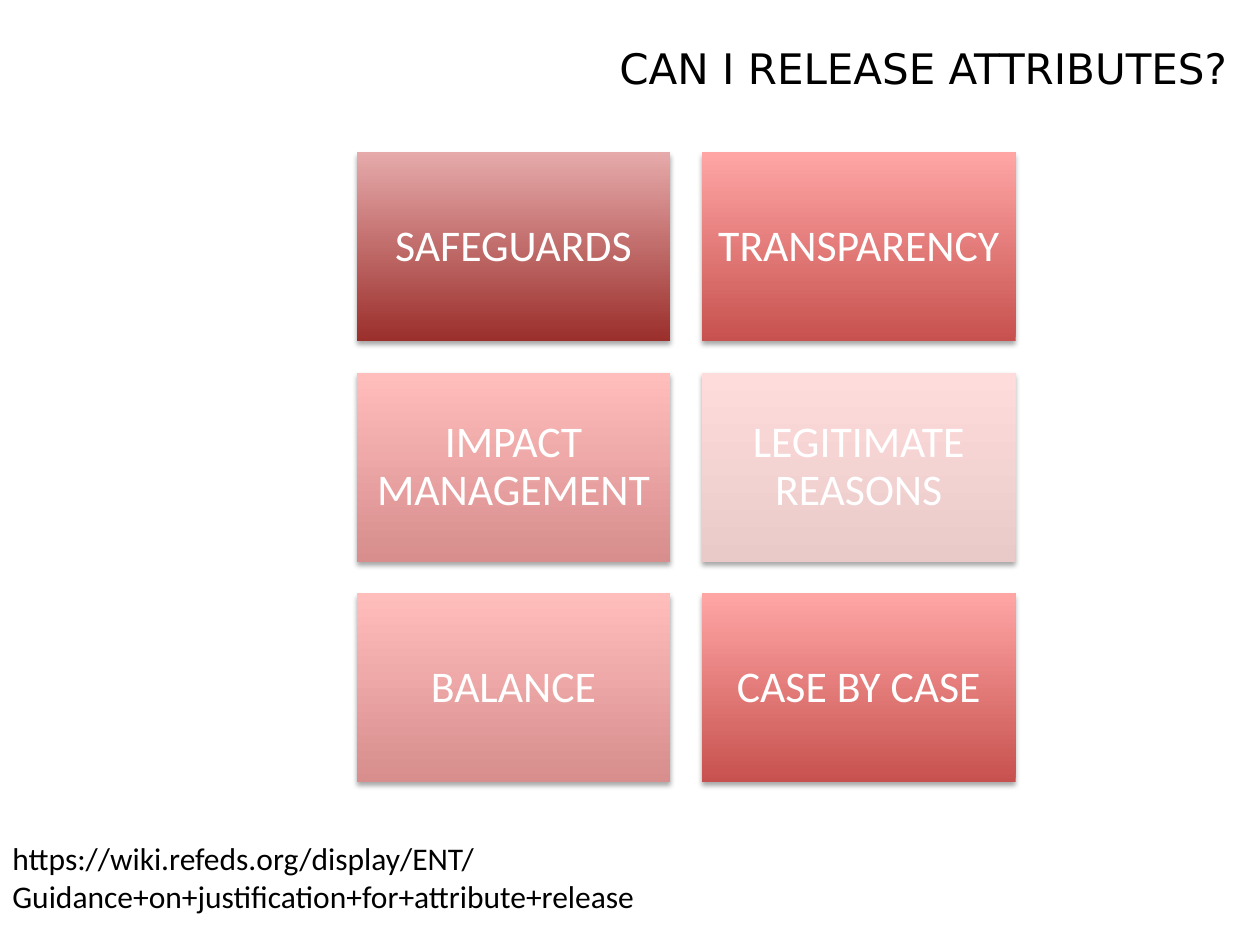
from dataclasses import dataclass
from typing import Any

from lxml import etree
from pptx import Presentation, util as u
from pptx.dml.color import RGBColor
from pptx.enum import shapes, text
from pptx.oxml.ns import qn

BLACK = RGBColor(0x00, 0x00, 0x00)
WHITE = RGBColor(0xFF, 0xFF, 0xFF)
DARK_RED = (RGBColor(0x9B, 0x2F, 0x2C), RGBColor(0xE6, 0xAA, 0xAA))
RED = (RGBColor(0xC7, 0x51, 0x4E), RGBColor(0xFF, 0xA6, 0xA5))
ROSE = (RGBColor(0xD7, 0x8E, 0x8D), RGBColor(0xFF, 0xBD, 0xBC))
PALE_ROSE = (RGBColor(0xEA, 0xC9, 0xC9), RGBColor(0xFF, 0xDC, 0xDC))

COLUMNS = 2
TILE_LEFT, TILE_TOP = 2.83, 1.21
TILE_WIDTH, TILE_HEIGHT = 2.49, 1.5
TILE_GAP = 0.25

INSETS = ("margin_left", "margin_top", "margin_right", "margin_bottom")
TILE_FRAME = {
    "word_wrap": True,
    "vertical_anchor": text.MSO_ANCHOR.MIDDLE,
    **dict.fromkeys(INSETS, u.Inches(0.1)),
}
TILE_PARAGRAPH = {"alignment": text.PP_ALIGN.CENTER, "line_spacing": 0.9}
TILE_FONT = {"name": "Calibri", "size": u.Pt(25)}
TITLE_FRAME = {
    "word_wrap": True,
    "auto_size": text.MSO_AUTO_SIZE.NONE,
    "vertical_anchor": text.MSO_ANCHOR.TOP,
}
TITLE_PARAGRAPH = {"alignment": text.PP_ALIGN.RIGHT}
TITLE_FONT = {"name": "DejaVu Sans", "size": u.Pt(24)}
LINK_FRAME = {"word_wrap": True, "auto_size": text.MSO_AUTO_SIZE.SHAPE_TO_FIT_TEXT}
LINK_FONT = {"name": "Calibri", "size": u.Pt(18)}


@dataclass(frozen=True)
class Tile:
    label: str
    gradient: tuple[RGBColor, RGBColor]


TILES = [
    Tile("SAFEGUARDS", DARK_RED),
    Tile("TRANSPARENCY", RED),
    Tile("IMPACT MANAGEMENT", ROSE),
    Tile("LEGITIMATE REASONS", PALE_ROSE),
    Tile("BALANCE", ROSE),
    Tile("CASE BY CASE", RED),
]


def apply(target: Any, values: dict[str, Any]) -> None:
    for name, value in values.items():
        setattr(target, name, value)


def write(shape: Any, words: str, frame: dict, line: dict, font: dict, color: RGBColor) -> None:
    shape.text_frame.text = words
    apply(shape.text_frame, frame)
    paragraph = shape.text_frame.paragraphs[0]
    apply(paragraph, line)
    run = paragraph.runs[0]
    apply(run.font, font)
    run.font.color.rgb = color


def add_shadow(shape: Any) -> None:
    shape.shadow.inherit = False
    effects = shape._element.spPr.find(qn("a:effectLst"))
    shadow = etree.SubElement(
        effects, qn("a:outerShdw"), blurRad=str(u.Pt(3.1)), dist=str(u.Pt(1.8)),
        dir="5400000", rotWithShape="0",
    )
    color = etree.SubElement(shadow, qn("a:srgbClr"), val="000000")
    etree.SubElement(color, qn("a:alpha"), val="35000")


def add_tile(slide: Any, tile: Tile, index: int) -> None:
    row, column = divmod(index, COLUMNS)
    shape = slide.shapes.add_shape(
        shapes.MSO_SHAPE.RECTANGLE,
        u.Inches(TILE_LEFT + column * (TILE_WIDTH + TILE_GAP)),
        u.Inches(TILE_TOP + row * (TILE_HEIGHT + TILE_GAP)),
        u.Inches(TILE_WIDTH),
        u.Inches(TILE_HEIGHT),
    )
    shape.fill.gradient()
    shape.fill.gradient_angle = 90
    for stop, color in zip(shape.fill.gradient_stops, tile.gradient):
        stop.color.rgb = color
    shape.line.fill.background()
    add_shadow(shape)
    write(shape, tile.label, TILE_FRAME, TILE_PARAGRAPH, TILE_FONT, WHITE)


def main() -> None:
    presentation = Presentation()
    presentation.slide_width = u.Inches(10)
    presentation.slide_height = u.Inches(7.5)
    slide = presentation.slides.add_slide(presentation.slide_layouts.get_by_name("Title Only"))

    for index, tile in enumerate(TILES):
        add_tile(slide, tile, index)

    link = slide.shapes.add_textbox(u.Inches(0), u.Inches(6.61), u.Inches(7.39), u.Inches(0.71))
    address = "https://wiki.refeds.org/display/ENT/Guidance+on+justification+for+attribute+release"
    write(link, address, LINK_FRAME, {}, LINK_FONT, BLACK)

    title = slide.shapes.title
    apply(title, {
        "left": u.Inches(2.83), "top": u.Inches(0.29),
        "width": u.Inches(7.01), "height": u.Inches(1.25),
    })
    write(title, "CAN I RELEASE ATTRIBUTES?", TITLE_FRAME, TITLE_PARAGRAPH, TITLE_FONT, BLACK)

    presentation.save("out.pptx")


if __name__ == "__main__":
    main()
